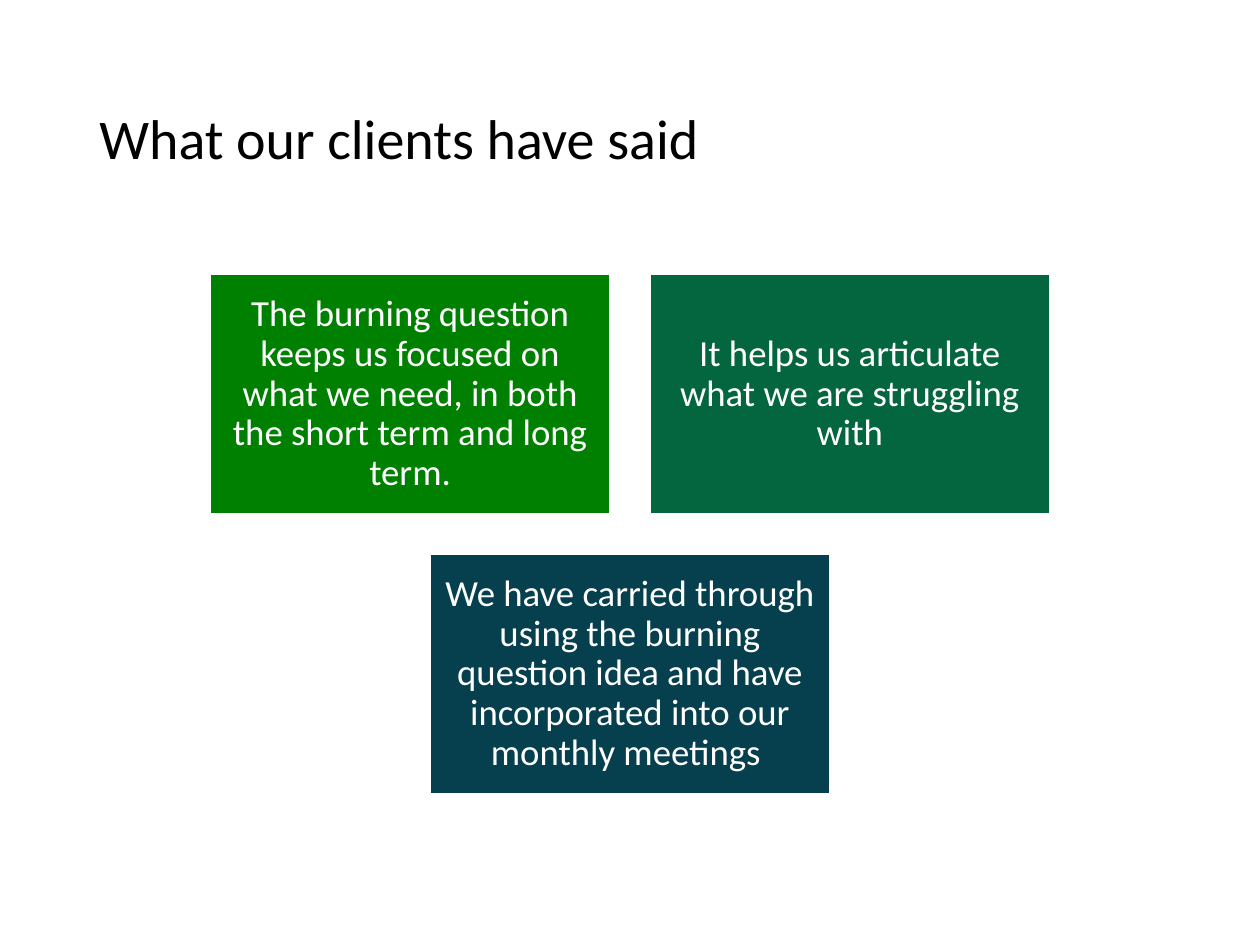
from dataclasses import dataclass

from pptx import Presentation
from pptx.dml.color import RGBColor
from pptx.enum.shapes import MSO_SHAPE
from pptx.enum.text import MSO_ANCHOR, PP_ALIGN
from pptx.util import Inches, Pt


@dataclass(frozen=True)
class Theme:
    font: str = "Calibri"
    title_size: int = 32
    quote_size: int = 21
    title_color: str = "000000"
    quote_color: str = "FFFFFF"
    border_color: str = "FFFFFF"
    line_spacing: float = 0.9


@dataclass(frozen=True)
class Quote:
    words: str
    fill: str


THEME = Theme()
SLIDE_WIDTH, SLIDE_HEIGHT = 10, 7.5
CARD_WIDTH, CARD_HEIGHT, GAP = 3.17, 1.9, 0.32
CARDS_TOP = 2.18
CARD_INSET = 0.09

# Client quotes, row by row
QUOTE_ROWS = [
    [
        Quote("The burning question keeps us focused on what we need, "
              "in both the short term and long term.", "008000"),
        Quote("It helps us articulate what we are struggling with", "04663F"),
    ],
    [
        Quote("We have carried through using the burning question idea and "
              "have incorporated into our monthly meetings ", "06404E"),
    ],
]


def write(frame, words: str, size: int, color: str, align: PP_ALIGN) -> None:
    frame.text = words
    frame.word_wrap = True
    frame.vertical_anchor = MSO_ANCHOR.MIDDLE
    paragraph = frame.paragraphs[0]
    paragraph.alignment = align
    paragraph.line_spacing = THEME.line_spacing
    font = paragraph.runs[0].font
    font.name = THEME.font
    font.size = Pt(size)
    font.color.rgb = RGBColor.from_string(color)


def draw_title(slide, words: str) -> None:
    title = slide.shapes.add_textbox(
        Inches(0.69), Inches(0.4), Inches(5.97), Inches(1.45))
    write(title.text_frame, words, THEME.title_size, THEME.title_color,
          PP_ALIGN.LEFT)


def draw_card(slide, quote: Quote, left: float, top: float) -> None:
    card = slide.shapes.add_shape(
        MSO_SHAPE.RECTANGLE, Inches(left), Inches(top),
        Inches(CARD_WIDTH), Inches(CARD_HEIGHT))
    card.shadow.inherit = False
    card.fill.solid()
    card.fill.fore_color.rgb = RGBColor.from_string(quote.fill)
    card.line.color.rgb = RGBColor.from_string(THEME.border_color)
    card.line.width = Pt(1)
    frame = card.text_frame
    frame.margin_left = frame.margin_right = Inches(CARD_INSET)
    frame.margin_top = frame.margin_bottom = Inches(CARD_INSET)
    write(frame, quote.words, THEME.quote_size, THEME.quote_color,
          PP_ALIGN.CENTER)


def draw_quotes(slide, rows: list[list[Quote]]) -> None:
    for row_index, row in enumerate(rows):
        # Each row is centred on the slide
        row_width = len(row) * (CARD_WIDTH + GAP) - GAP
        row_left = (SLIDE_WIDTH - row_width) / 2
        top = CARDS_TOP + row_index * (CARD_HEIGHT + GAP)
        for column, quote in enumerate(row):
            draw_card(slide, quote, row_left + column * (CARD_WIDTH + GAP), top)


def main() -> None:
    deck = Presentation()
    deck.slide_width = Inches(SLIDE_WIDTH)
    deck.slide_height = Inches(SLIDE_HEIGHT)
    slide = deck.slides.add_slide(deck.slide_layouts[6])
    draw_title(slide, "What our clients have said")
    draw_quotes(slide, QUOTE_ROWS)
    deck.save("out.pptx")


if __name__ == "__main__":
    main()
